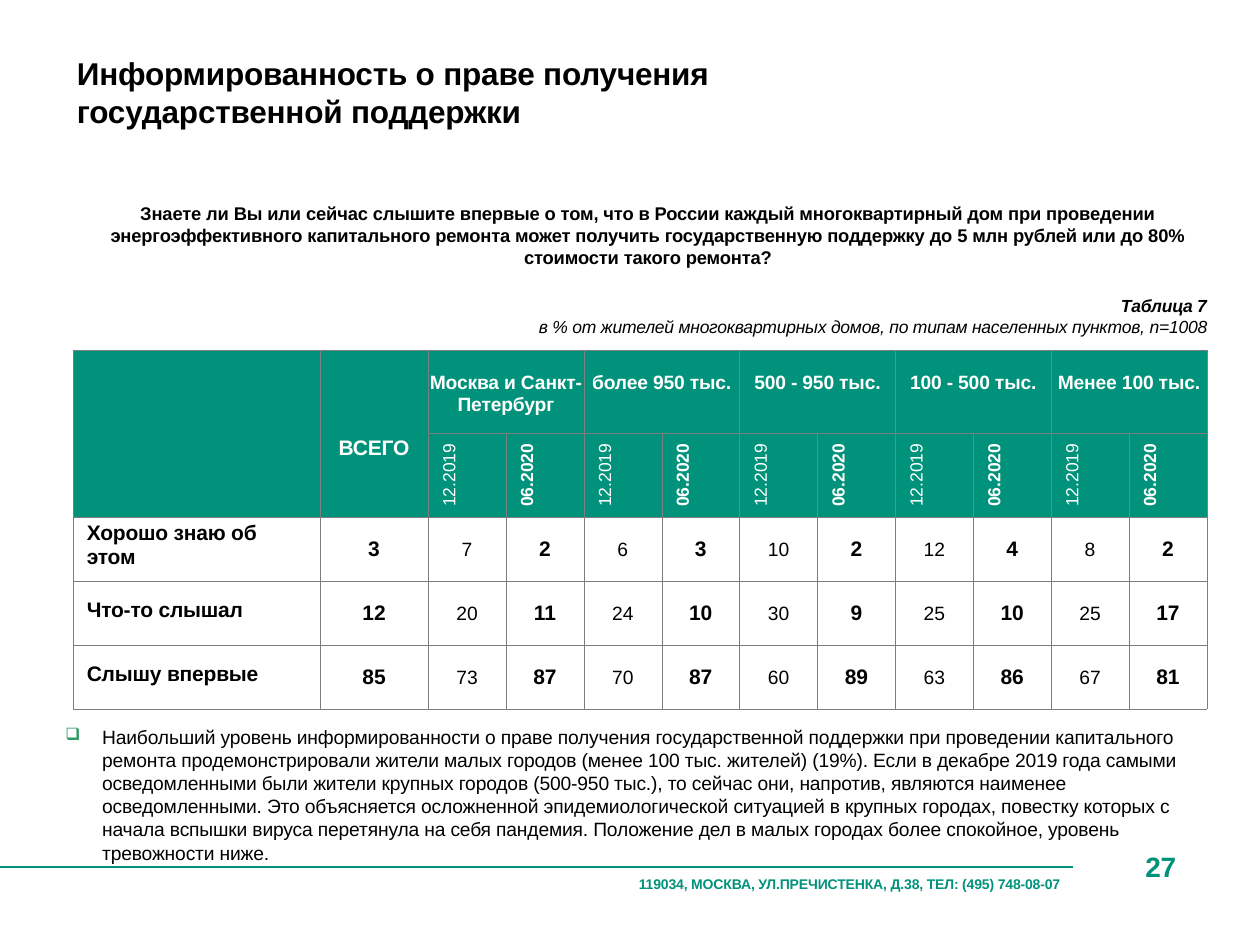
"""Build the slide on awareness of the right to state support."""
from pptx import Presentation
from pptx.dml.color import RGBColor
from pptx.enum.shapes import MSO_CONNECTOR
from pptx.enum.text import MSO_ANCHOR, PP_ALIGN
from pptx.oxml import parse_xml
from pptx.oxml.ns import nsdecls
from pptx.util import Cm, Pt

TITLE = "Информированность о праве получения государственной поддержки"
QUESTION = (
    "Знаете ли Вы или сейчас слышите впервые о том, что в России каждый "
    "многоквартирный дом при проведении энергоэффективного капитального ремонта "
    "может получить государственную поддержку до 5 млн рублей или до 80% "
    "стоимости такого ремонта?"
)
CAPTION = "Таблица 7"
BASE = "в % от жителей многоквартирных домов, по типам населенных пунктов, n=1008"
TOTAL = "ВСЕГО"
GROUPS = ["Москва и Санкт-\nПетербург", "более 950 тыс.", "500 - 950 тыс.",
          "100 - 500 тыс.", "Менее 100 тыс."]
WAVES = ["12.2019", "06.2020"]
ROWS = [
    ("Хорошо знаю об\nэтом", 3, [7, 2, 6, 3, 10, 2, 12, 4, 8, 2]),
    ("Что-то слышал", 12, [20, 11, 24, 10, 30, 9, 25, 10, 25, 17]),
    ("Слышу впервые", 85, [73, 87, 70, 87, 60, 89, 63, 86, 67, 81]),
]
FINDING = (
    "Наибольший уровень информированности о праве получения государственной "
    "поддержки при проведении капитального ремонта продемонстрировали жители малых "
    "городов (менее 100 тыс. жителей) (19%). Если в декабре 2019 года самыми "
    "осведомленными были жители крупных городов (500-950 тыс.), то сейчас они, "
    "напротив, являются наименее осведомленными. Это объясняется осложненной "
    "эпидемиологической ситуацией в крупных городах, повестку которых с начала "
    "вспышки вируса перетянула на себя пандемия. Положение дел в малых городах "
    "более спокойное, уровень тревожности ниже."
)
ADDRESS = "119034, МОСКВА, УЛ.ПРЕЧИСТЕНКА, Д.38, ТЕЛ: (495) 748-08-07"
PAGE = "27"

THEME = {
    "font": "Arial", "text": "000000", "white": "FFFFFF", "green": "00927A",
    "rule": "00907C", "border": "7E7E7E", "bullet": "339966",
    "title": 18, "page": 16, "strong": 12, "body": 11, "question": 10.5,
    "note": 10, "footer": 8,
}
COLS = [4.98, 2.18] + [1.57] * 10
HEIGHTS = [1.68, 1.68] + [1.29] * 3
CENTER, RIGHT = PP_ALIGN.CENTER, PP_ALIGN.RIGHT


def rgb(name):
    return RGBColor.from_string(THEME[name])


def write(tf, text, size="body", color="text", bold=False, italic=False,
          align=None, spc=-10, before=0, line=None, left=0, bullet=None):
    for i, part in enumerate(text.split("\n")):
        p = tf.add_paragraph() if tf.text else tf.paragraphs[0]
        pPr = p._p.get_or_add_pPr()
        if left:
            pPr.set("marL", str(Cm(left)))
        if bullet:
            pPr.set("indent", str(Cm(-0.74)))
            for xml in (f'<a:buClr {nsdecls("a")}><a:srgbClr val="{THEME["bullet"]}"/></a:buClr>',
                        f'<a:buSzPct {nsdecls("a")} val="88000"/>',
                        f'<a:buChar {nsdecls("a")} char="{bullet}"/>'):
                pPr.append(parse_xml(xml))
        if align is not None:
            p.alignment = align
        if before and i == 0:
            p.space_before = Pt(before)
        if line:
            p.line_spacing = Pt(line)
        r = p.add_run()
        r.text = part
        f = r.font
        f.name, f.size, f.bold, f.italic = THEME["font"], Pt(THEME[size]), bold, italic
        f.color.rgb = rgb(color)
        r._r.get_or_add_rPr().set("spc", str(spc))


def add_box(s, x, y, w, h, top=0.02):
    tf = s.shapes.add_textbox(Cm(x), Cm(y), Cm(w), Cm(h)).text_frame
    tf.word_wrap = True
    tf.margin_left = tf.margin_right = tf.margin_bottom = 0
    tf.margin_top = Cm(top)
    return tf


def fill_cell(cell, text, top=0.02, middle=True, **fmt):
    cell.margin_top = Cm(top)
    if middle:
        cell.vertical_anchor = MSO_ANCHOR.MIDDLE
    write(cell.text_frame, text, **fmt)


def style_cell(cell, header):
    cell.margin_left = cell.margin_right = cell.margin_bottom = 0
    tcPr = cell._tc.get_or_add_tcPr()
    for side in "LRTB":
        tcPr.append(parse_xml(
            f'<a:ln{side} {nsdecls("a")} w="3175"><a:solidFill>'
            f'<a:srgbClr val="{THEME["border"]}"/></a:solidFill></a:ln{side}>'))
    if header:
        cell.fill.solid()
        cell.fill.fore_color.rgb = rgb("green")
    else:
        cell.fill.background()


def add_results(s):
    tbl = s.shapes.add_table(len(HEIGHTS), len(COLS), Cm(1.47), Cm(7.06),
                             Cm(sum(COLS)), Cm(sum(HEIGHTS))).table
    tbl.first_row = tbl.horz_banding = False
    for col, w in zip(tbl.columns, COLS):
        col.width = Cm(w)
    for i, h in enumerate(HEIGHTS):
        tbl.rows[i].height = Cm(h)
        for j in range(len(COLS)):
            style_cell(tbl.cell(i, j), i < 2)
    for j in (0, 1):
        tbl.cell(0, j).merge(tbl.cell(1, j))
    head = {"color": "white", "align": CENTER}
    fill_cell(tbl.cell(0, 1), TOTAL, top=0.6, size="strong", bold=True, **head)
    for g, name in enumerate(GROUPS):
        j = 2 + 2 * g
        tbl.cell(0, j).merge(tbl.cell(0, j + 1))
        fill_cell(tbl.cell(0, j), name, top=0.45, middle=False, bold=True, **head)
        for k, wave in enumerate(WAVES):
            cell = tbl.cell(1, j + k)
            fill_cell(cell, wave, top=0.23, size="note", bold=k == 1, spc=0, **head)
            cell._tc.get_or_add_tcPr().set("vert", "vert270")
    for i, (label, total, values) in enumerate(ROWS, 2):
        fill_cell(tbl.cell(i, 0), label, top=0.1 if "\n" in label else 0.36,
                  middle=False, size="strong", bold=True, left=0.28)
        for j, v in enumerate([total] + values, 1):
            strong = j % 2 == 1
            fill_cell(tbl.cell(i, j), str(v), size="strong" if strong else "body",
                      bold=strong, align=CENTER, spc=0)


def main():
    prs = Presentation()
    prs.slide_width, prs.slide_height = Cm(25.4), Cm(19.05)
    s = prs.slides.add_slide(prs.slide_layouts[6])
    rule = s.shapes.add_connector(MSO_CONNECTOR.STRAIGHT, 0, Cm(17.48), Cm(21.64), Cm(17.48))
    rule.line.color.rgb, rule.line.width = rgb("rule"), Pt(1.2)
    rule._element.spPr.append(parse_xml(f'<a:effectLst {nsdecls("a")}/>'))
    write(add_box(s, 1.27, 14.6, 22.76, 2.85), FINDING, left=0.79, bullet="❑")
    add_results(s)
    tf = add_box(s, 1.8, 4.06, 22.53, 2.8)
    write(tf, QUESTION, size="question", bold=True, align=CENTER, spc=-5)
    write(tf, CAPTION, size="note", bold=True, italic=True, align=RIGHT, before=15)
    write(tf, BASE, size="note", italic=True, align=RIGHT)
    write(add_box(s, 22.99, 17.15, 0.84, 0.7, top=0), PAGE, size="page",
          color="green", bold=True, line=18.6, left=0.1)
    write(add_box(s, 12.85, 17.65, 8.84, 0.38, top=0), ADDRESS, size="footer",
          color="green", bold=True, left=0.03)
    write(add_box(s, 1.52, 1.07, 15.27, 1.57), TITLE, size="title", bold=True, left=0.03)
    prs.save("out.pptx")


if __name__ == "__main__":
    main()
